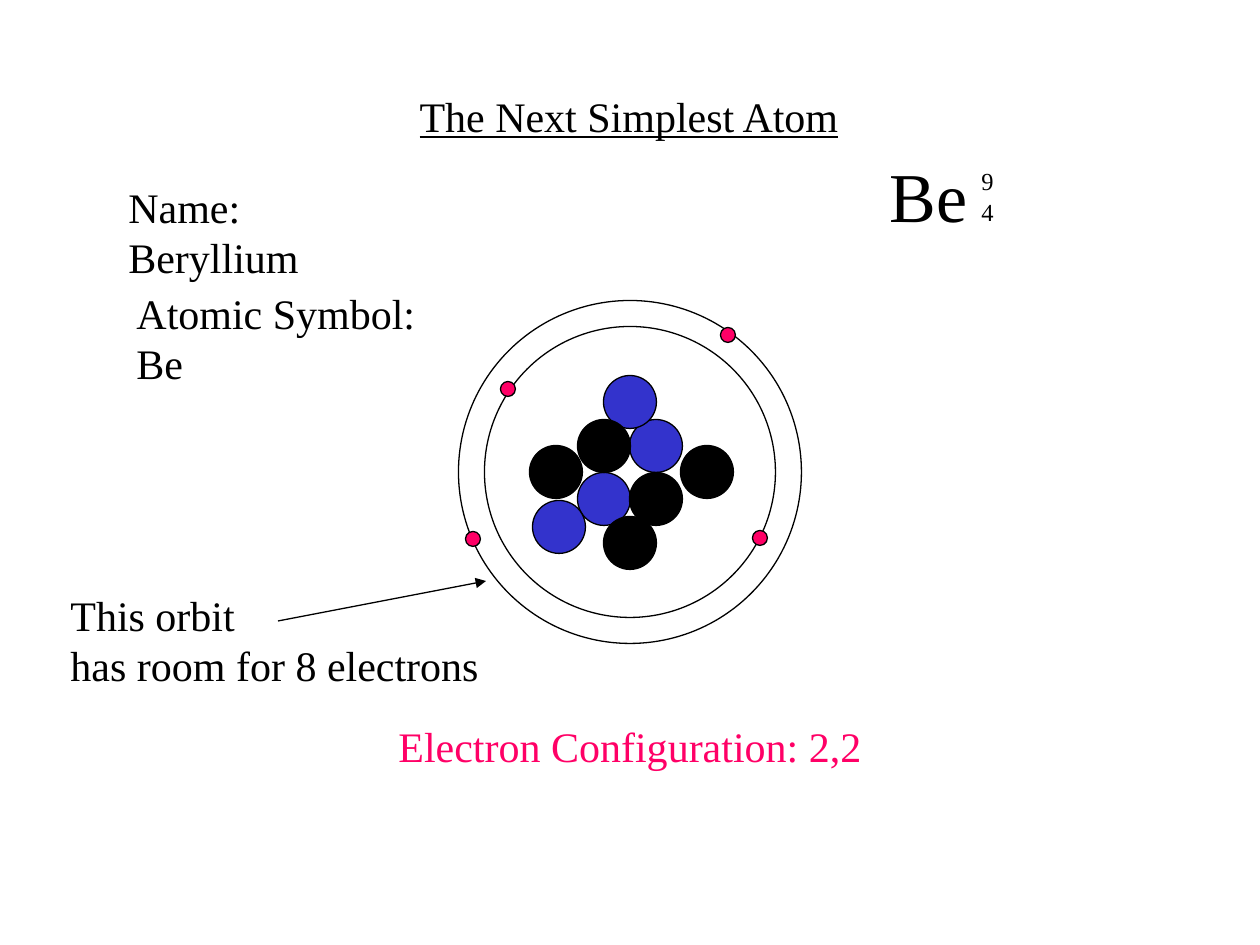
"""Build the slide about the beryllium atom."""
from lxml import etree
from pptx import Presentation
from pptx.dml.color import RGBColor
from pptx.enum.shapes import MSO_CONNECTOR, MSO_SHAPE
from pptx.enum.text import MSO_ANCHOR, MSO_AUTO_SIZE, PP_ALIGN
from pptx.oxml.ns import qn
from pptx.util import Pt

OVAL = MSO_SHAPE.OVAL
STRAIGHT = MSO_CONNECTOR.STRAIGHT
TOP = MSO_ANCHOR.TOP
GROW = MSO_AUTO_SIZE.SHAPE_TO_FIT_TEXT
LEFT, CENTER = PP_ALIGN.LEFT, PP_ALIGN.CENTER

PX = 914400 / 126
THEME = {
    "font": "Times New Roman",
    "ink": RGBColor(0x00, 0x00, 0x00),
    "pink": RGBColor(0xFF, 0x00, 0x66),
    "blue": RGBColor(0x33, 0x33, 0xCC),
    "body": Pt(24),
    "symbol": Pt(40),
    "small": Pt(14),
    "line": Pt(0.75),
}


def put_text(shape, words, size, color, wrap=False, align=LEFT):
    frame = shape.text_frame
    frame.text = words
    frame.word_wrap = wrap
    frame.auto_size = GROW
    frame.vertical_anchor = TOP
    for line in frame.paragraphs:
        line.alignment = align
        for run in line.runs:
            run.font.name = THEME["font"]
            run.font.size = THEME[size]
            run.font.color.rgb = THEME[color]


def add_disc(x, y, width, color=None):
    box = [round(n * PX) for n in (x - width / 2, y - width / 2, width, width)]
    disc = slide.shapes.add_shape(OVAL, *box)
    disc.shadow.inherit = False
    if color:
        disc.fill.solid()
        disc.fill.fore_color.rgb = THEME[color]
    else:
        disc.fill.background()
    disc.line.color.rgb = THEME["ink"]
    disc.line.width = THEME["line"]


deck = Presentation()
deck.slide_width, deck.slide_height = round(1260 * PX), round(945 * PX)
slide = deck.slides.add_slide(deck.slide_layouts[5])

title = slide.shapes.title
title.left, title.top, title.width, title.height = [
    round(n * PX) for n in (406, 84, 446, 63)]
put_text(title, "The Next Simplest Atom", "body", "ink", align=CENTER)
title.text_frame.paragraphs[0].runs[0].font.underline = True

labels = [
    ("Be", (877, 146, 134, 97), "symbol", "ink", True),
    ("9", (969, 160, 36, 42), "small", "ink", True),
    ("4", (969, 191, 38, 42), "small", "ink", False),
    ("Name: \tBeryllium", (116, 175, 321, 63), "body", "ink", False),
    ("Atomic Symbol: Be", (124, 281, 360, 63), "body", "ink", False),
    ("Electron Configuration: 2,2", (386, 714, 488, 63), "body", "pink", False),
    ("This orbit\nhas room for 8 electrons", (58, 583, 433, 113),
     "body", "ink", False),
]
for words, box, size, color, wrap in labels:
    label = slide.shapes.add_textbox(*[round(n * PX) for n in box])
    put_text(label, words, size, color, wrap)

for width in (343, 291):
    add_disc(630, 472, width)

groups = [
    (53, "blue", [(656, 446), (604, 499), (630, 402), (559, 527)]),
    (53, "ink", [(656, 499), (604, 446), (630, 543), (556, 472), (707, 472)]),
    (15, "pink", [(508, 389), (760, 538), (728, 335), (473, 539)]),
]
for width, color, spots in groups:
    for x, y in spots:
        add_disc(x, y, width, color)

arrow = slide.shapes.add_connector(
    STRAIGHT, *[round(n * PX) for n in (278, 621, 486, 581)])
arrow.line.color.rgb = THEME["ink"]
arrow.line.width = THEME["line"]
etree.SubElement(arrow.line._get_or_add_ln(), qn("a:tailEnd"), type="triangle")
etree.SubElement(arrow._element.spPr, qn("a:effectLst"))

deck.save("out.pptx")
